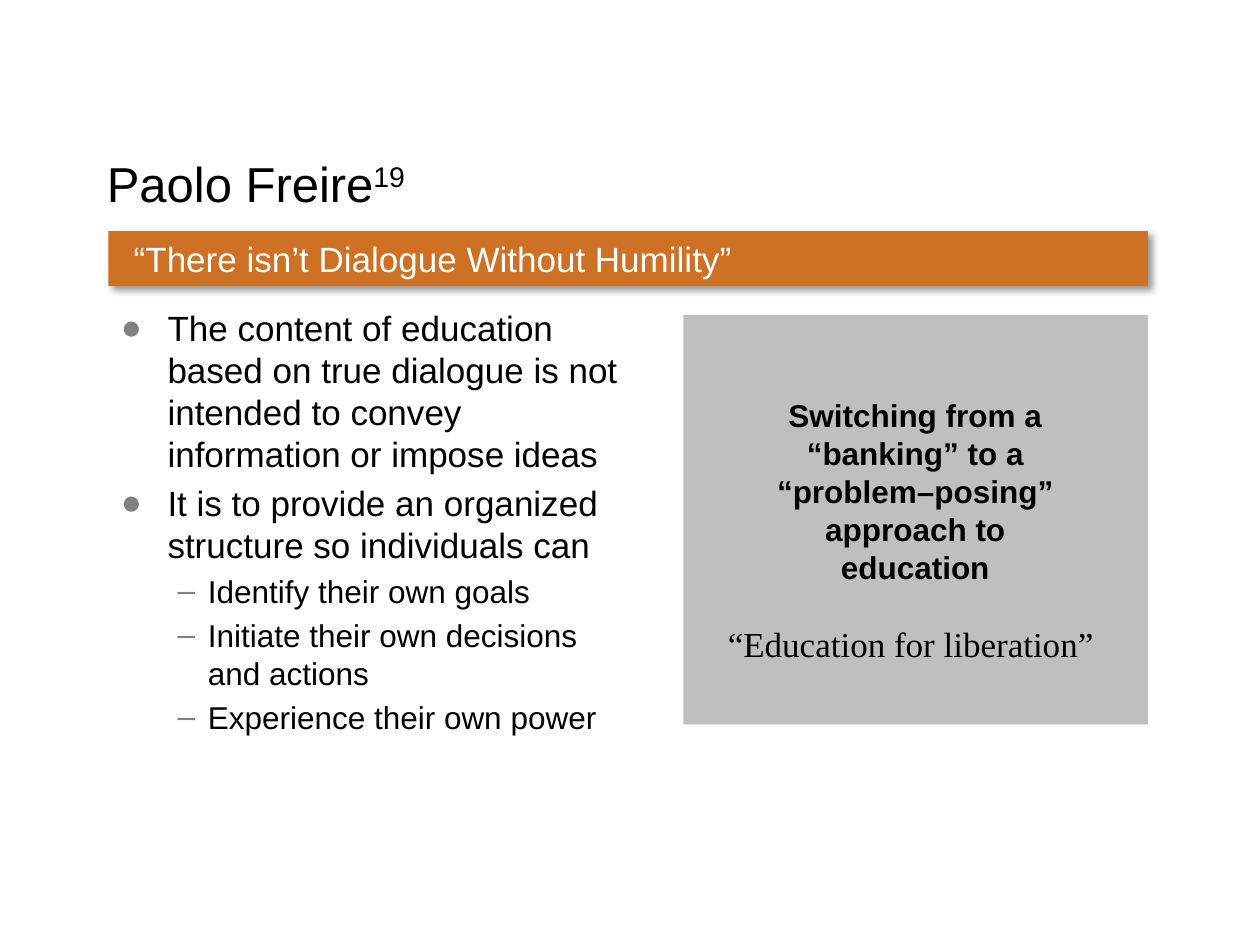
import pptx
import pptx.util
import pptx.dml.color
import pptx.enum.shapes
import pptx.enum.text
import pptx.oxml
import pptx.oxml.ns

Pt = pptx.util.Pt
ALIGN = pptx.enum.text.PP_ALIGN

THEME = {
    "text": "000000", "light": "FFFFFF", "banner": "CE7124", "panel": "BFBFBF", "bullet": "808080",
    "sans": "Arial", "serif": "Times New Roman",
    "title": 28, "large": 20, "medium": 18,
}

TITLE, CITATION = "Paolo Freire", "19"
BANNER = "“There isn’t Dialogue Without Humility”"
POINTS = [
    (0, "The content of education based on true dialogue is not intended to convey information or impose ideas"),
    (0, "It is to provide an organized structure so individuals can"),
    (1, "Identify their own goals"),
    (1, "Initiate their own decisions and actions"),
    (1, "Experience their own power"),
]
LEVELS = [
    {"mark": "●", "left": 26.64, "hang": 26.64, "size": THEME["large"]},
    {"mark": "–", "left": 49.68, "hang": 17.28, "size": THEME["medium"]},
]
APPROACH = "Switching from a “banking” to a “problem–posing” approach to education"
MOTTO = "“Education for liberation” "

LEFT, WIDTH = 62, 594
PANEL_WIDTH = 265.5
BOXES = {
    "panel": (LEFT + WIDTH - PANEL_WIDTH, 180, PANEL_WIDTH, 234),
    "title": (54, 84, 630, 66),
    "points": (LEFT, 171.5, 306, 311),
    "motto": (394, 355, 258, 29),
    "approach": (424, 223, 198, 117),
    "banner": (LEFT, 132, WIDTH, 31.5),
}


def rgb(name):
    return pptx.dml.color.RGBColor.from_string(THEME[name])


def xml(tag, body):
    return pptx.oxml.parse_xml(f"<a:{tag} {pptx.oxml.ns.nsdecls('a')}{body}")


def add_run(p, text, size, color="text", font="sans", bold=False):
    r = p.add_run()
    r.text = text
    r.font.color.rgb = rgb(color)
    formats = {"size": Pt(size), "name": THEME[font], "bold": bold}
    for key, value in formats.items():
        setattr(r.font, key, value)
    return r


def add_text_box(s, name):
    tf = s.shapes.add_textbox(*map(Pt, BOXES[name])).text_frame
    tf.word_wrap = True
    return tf


def add_rectangle(s, name):
    sp = s.shapes.add_shape(pptx.enum.shapes.MSO_SHAPE.RECTANGLE, *map(Pt, BOXES[name]))
    sp.shadow.inherit = False
    sp.fill.solid()
    sp.fill.fore_color.rgb = rgb(name)
    sp.line.fill.background()
    return sp


def add_bullet(p, level):
    pPr = p._p.get_or_add_pPr()
    pPr.set("marL", str(Pt(level["left"])))
    pPr.set("indent", str(-Pt(level["hang"])))
    pPr.append(xml("buClr", f'><a:srgbClr val="{THEME["bullet"]}"/></a:buClr>'))
    pPr.append(xml("buFont", f' typeface="{THEME["sans"]}"/>'))
    pPr.append(xml("buChar", f' char="{level["mark"]}"/>'))


def add_points(s):
    tf = add_text_box(s, "points")
    for i, (depth, text) in enumerate(POINTS):
        level = LEVELS[depth]
        p = tf.add_paragraph() if i else tf.paragraphs[0]
        p.level = depth
        add_bullet(p, level)
        if i:
            p.space_before = Pt(level["size"] * 0.2)
        add_run(p, text, level["size"])


def add_banner(s):
    sp = add_rectangle(s, "banner")
    effects = sp._element.spPr.find(pptx.oxml.ns.qn("a:effectLst"))
    effects.append(xml("outerShdw", f' blurRad="{Pt(4)}" dist="{Pt(3)}" dir="2700000" algn="tl" rotWithShape="0">'
                       '<a:srgbClr val="000000"><a:alpha val="40000"/></a:srgbClr></a:outerShdw>'))
    tf = sp.text_frame
    tf.margin_left = Pt(14.4)
    p = tf.paragraphs[0]
    p.alignment = ALIGN.LEFT
    add_run(p, BANNER, THEME["large"], "light")


def main():
    prs = pptx.Presentation()
    prs.slide_width, prs.slide_height = Pt(720), Pt(540)
    s = prs.slides.add_slide(prs.slide_layouts[6])

    add_rectangle(s, "panel")
    p = add_text_box(s, "title").paragraphs[0]
    add_run(p, TITLE, THEME["title"])
    r = add_run(p, CITATION, THEME["title"])
    r.font._element.set("baseline", "30000")
    add_points(s)

    p = add_text_box(s, "motto").paragraphs[0]
    p.alignment = ALIGN.CENTER
    p.line_spacing = 0.9
    add_run(p, MOTTO, THEME["large"], font="serif")

    p = add_text_box(s, "approach").paragraphs[0]
    p.alignment = ALIGN.CENTER
    add_run(p, APPROACH, THEME["medium"], bold=True)

    add_banner(s)
    prs.save("out.pptx")


if __name__ == "__main__":
    main()
